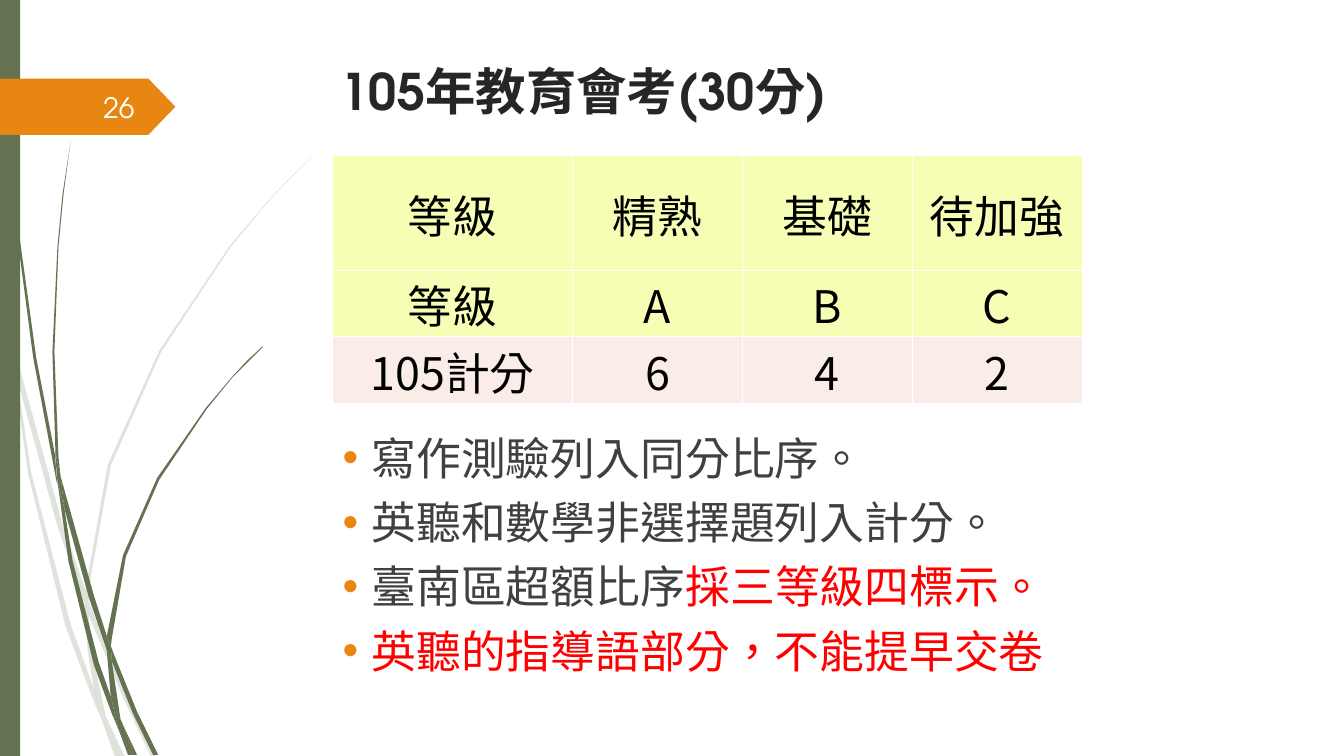
from lxml.etree import SubElement
from pptx import Presentation
from pptx.dml.color import RGBColor
from pptx.enum.shapes import MSO_SHAPE
from pptx.enum.text import MSO_ANCHOR, MSO_AUTO_SIZE, PP_ALIGN
from pptx.oxml.ns import qn
from pptx.util import Cm, Pt

GREEN = RGBColor(0x64, 0x72, 0x52)
ORANGE = RGBColor(0xE7, 0x87, 0x12)
WHITE = RGBColor(0xFF, 0xFF, 0xFF)
NUMBER = RGBColor(0xFE, 0xFF, 0xFF)
DARK = RGBColor(0x26, 0x26, 0x26)
GREY = RGBColor(0x40, 0x40, 0x40)
BLACK = RGBColor(0, 0, 0)
RED = RGBColor(0xFF, 0, 0)
LIME = RGBColor(0xF5, 0xFE, 0xB4)
BLUSH = RGBColor(0xFA, 0xED, 0xE7)
LATIN = "TeX Gyre Adventor"
CJK = "Noto Sans CJK JP"
GRASS_UNIT = 2.54

PALE_GRASS = [
    [(0.11, 3.5), (0.08, 3.22), (0, 2.82), (0, 2.99), (0.1, 3.44)],
    [(0.57, 5.22), (0.84, 5.99), (0.85, 5.86), (0.62, 5.2), (0.14, 3.45), (0.17, 3.76)],
    [(0.92, 6.07), (0.88, 5.96), (0.88, 6.1), (1.23, 6.94), (1.5, 7.51), (1.55, 7.51), (1.27, 6.92)],
    [(1.19, 7.51), (1.24, 7.51), (1.05, 7.11)],
    [(0.93, 6.83), (0.7, 6.19), (0.31, 4.69), (0.17, 3.76), (0.11, 3.5), (0.28, 4.7), (0.65, 6.21),
     (0.92, 6.93), (1.01, 7.14), (0.99, 7.07)],
    [(0.84, 5.99), (0.87, 6.46), (0.93, 6.83), (0.96, 6.92), (1.05, 7.11), (1.04, 7.06), (0.91, 6.46),
     (0.88, 6.1), (0.88, 6.08)],
    [(0.88, 5.84), (1.1, 4.62), (1.6, 3.49), (2.29, 2.45), (2.68, 1.98), (2.9, 1.75), (3.12, 1.53),
     (2.89, 1.75), (2.68, 1.97), (2.28, 2.44), (1.58, 3.48), (1.07, 4.61), (0.85, 5.84), (0.85, 5.86),
     (0.88, 5.96)],
    [(1.01, 7.14), (1.14, 7.51), (1.19, 7.51)],
    [(0.88, 6.08), (0.88, 6.1), (0.88, 5.96), (0.85, 5.86), (0.84, 5.99)],
    [(0.96, 6.92), (0.93, 6.83), (0.99, 7.07), (1.01, 7.14), (1.19, 7.51), (1.05, 7.11)],
]
DARK_GRASS = [
    [(0.07, 1.1), (0.17, 2.33), (0.33, 3.55), (0.56, 4.77), (0.57, 4.81), (0.55, 4.57), (0.55, 4.53),
     (0.36, 3.55), (0.19, 2.32), (0.08, 1.09), (0.05, 0.48), (0.03, 0), (0.03, 0.48)],
    [(0.88, 5.92), (1.06, 6.45), (1.06, 6.33), (1.06, 6.31), (0.93, 5.9), (0.6, 4.72), (0.64, 5.05)],
    [(1.13, 6.49), (1.1, 6.41), (1.11, 6.56), (1.32, 7.08), (1.52, 7.49), (1.57, 7.49), (1.36, 7.06)],
    [(1.1, 6.91), (0.98, 6.57), (0.72, 5.56), (0.64, 5.05), (0.57, 4.77), (0.68, 5.57), (0.93, 6.59),
     (1.11, 7.08), (1.17, 7.22), (1.16, 7.17)],
    [(0.6, 4.72), (0.58, 4.53), (0.54, 3.49), (0.58, 2.45), (0.63, 1.93), (0.7, 1.41), (0.62, 1.93),
     (0.57, 2.45), (0.52, 3.49), (0.55, 4.49)],
    [(1.33, 7.49), (1.36, 7.49), (1.22, 7.19)],
    [(0.57, 4.77), (0.64, 5.05), (0.6, 4.72), (0.55, 4.49), (0.55, 4.53)],
    [(1.11, 6.33), (1.25, 5.52), (1.58, 4.76), (2.05, 4.06), (2.31, 3.74), (2.46, 3.59), (2.61, 3.44),
     (2.6, 3.44), (2.45, 3.58), (2.31, 3.73), (2.04, 4.05), (1.56, 4.74), (1.22, 5.51), (1.06, 6.31),
     (1.1, 6.41)],
    [(1.17, 7.22), (1.27, 7.49), (1.31, 7.49)],
    [(1.06, 6.45), (1.1, 6.92), (1.16, 7.06), (1.22, 7.19), (1.2, 7.16), (1.11, 6.56), (1.09, 6.51)],
    [(1.06, 6.45), (1.09, 6.51), (1.11, 6.56), (1.1, 6.41), (1.06, 6.31), (1.06, 6.33)],
    [(1.16, 7.06), (1.1, 6.91), (1.16, 7.17), (1.17, 7.22), (1.31, 7.49), (1.33, 7.49), (1.22, 7.19)],
]


class Deck:
    """Hold the style and the current slide."""

    def __init__(self, prs):
        """Add a title and content slide."""
        self.s = prs.slides.add_slide(prs.slide_layouts[1])

    def run(self, p, text, size, font, color, bold=False):
        """Add one formatted run."""
        r = p.add_run()
        r.text = text
        r.font.size, r.font.name, r.font.bold = Pt(size), font, bold
        r.font.color.rgb = color
        rPr = r._r.get_or_add_rPr()
        rPr.set("lang", "zh-TW")
        SubElement(rPr, qn("a:ea"), typeface=font)

    def paint(self, sp, color, opacity=100):
        """Give a shape a plain fill."""
        sp.shadow.inherit = False
        sp.fill.solid()
        sp.fill.fore_color.rgb = color
        sp.line.fill.background()
        if opacity < 100:
            clr = next(sp._element.spPr.iter(qn("a:srgbClr")))
            SubElement(clr, qn("a:alpha"), val=str(opacity * 1000))

    def grass(self, pieces, opacity=100):
        """Draw grass blades from the outlines of their pieces."""
        for piece in pieces:
            outline = [(Cm(x * GRASS_UNIT), Cm(y * GRASS_UNIT)) for x, y in piece]
            fb = self.s.shapes.build_freeform(*outline[0])
            fb.add_line_segments(outline[1:], close=True)
            self.paint(fb.convert_to_shape(), GREEN, opacity)

    def shape(self, kind, box, color):
        """Add a filled preset shape."""
        sp = self.s.shapes.add_shape(kind, *map(Cm, box))
        self.paint(sp, color)
        return sp

    def frame(self, sp, box, anchor):
        """Place a text shape and return its text frame."""
        sp.left, sp.top, sp.width, sp.height = map(Cm, box)
        tf = sp.text_frame
        tf.word_wrap = True
        tf.auto_size = MSO_AUTO_SIZE.NONE
        tf.vertical_anchor = anchor
        return tf

    def title(self, text, box):
        """Fill the title placeholder."""
        p = self.frame(self.s.shapes.title, box, MSO_ANCHOR.TOP).paragraphs[0]
        p.alignment = PP_ALIGN.LEFT
        self.run(p, text, 36, LATIN, DARK, True)

    def bullets(self, items, box):
        """Fill the body placeholder with bulleted runs."""
        tf = self.frame(self.s.placeholders[1], box, MSO_ANCHOR.TOP)
        for i, item in enumerate(items):
            p = tf.add_paragraph() if i else tf.paragraphs[0]
            pPr = p._p.get_or_add_pPr()
            pPr.set("marL", str(Cm(0.73)))
            pPr.set("indent", str(-Cm(0.73)))
            clr = SubElement(pPr, qn("a:buClr"))
            SubElement(clr, qn("a:srgbClr"), val=str(ORANGE))
            SubElement(pPr, qn("a:buFont"), typeface="Arial")
            SubElement(pPr, qn("a:buChar"), char="•")
            p.space_before = Pt(7.5 if i else 0)
            for text, color in item:
                self.run(p, text, 32, CJK, color)

    def number(self, text, box):
        """Add the slide number."""
        sp = self.s.shapes.add_textbox(*map(Cm, box))
        p = self.frame(sp, box, MSO_ANCHOR.MIDDLE).paragraphs[0]
        p.alignment = PP_ALIGN.RIGHT
        self.run(p, text, 20, LATIN, NUMBER)

    def cell(self, cell, text, fill):
        """Format and fill one table cell."""
        tcPr = cell._tc.get_or_add_tcPr()
        for side in "LRTB":
            ln = SubElement(tcPr, qn(f"a:ln{side}"), w=str(Pt(1)))
            solid = SubElement(ln, qn("a:solidFill"))
            SubElement(solid, qn("a:srgbClr"), val=str(WHITE))
        cell.fill.solid()
        cell.fill.fore_color.rgb = fill
        cell.margin_left = cell.margin_right = cell.margin_top = Cm(0.03)
        cell.margin_bottom = 0
        cell.vertical_anchor = MSO_ANCHOR.MIDDLE
        p = cell.text_frame.paragraphs[0]
        p.alignment = PP_ALIGN.CENTER
        self.run(p, text, 32, CJK, BLACK)

    def table(self, rows, fills, widths, heights, left, top):
        """Add a table with one fill per row."""
        size = Cm(sum(widths)), Cm(sum(heights))
        tbl = self.s.shapes.add_table(len(rows), len(widths), Cm(left), Cm(top), *size).table
        for col, width in zip(tbl.columns, widths):
            col.width = Cm(width)
        for i, (texts, fill) in enumerate(zip(rows, fills)):
            tbl.rows[i].height = Cm(heights[i])
            for j, text in enumerate(texts):
                self.cell(tbl.cell(i, j), text, fill)


def main():
    """Build and save the slide."""
    prs = Presentation()
    prs.slide_width, prs.slide_height = Cm(33.87), Cm(19.05)
    deck = Deck(prs)
    deck.grass(PALE_GRASS, 20)
    deck.grass(DARK_GRASS)
    deck.shape(MSO_SHAPE.RECTANGLE, (0, 0, 0.51, 19.05), GREEN)
    tag = deck.shape(MSO_SHAPE.PENTAGON, (0, 1.98, 4.42, 1.42), ORANGE)
    tag.adjustments[0] = 0.48
    deck.title("105年教育會考(30分)", (8.33, 1.4, 19.46, 3.15))
    deck.bullets([
        [("寫作測驗列入同分比序。", GREY)],
        [("英聽和數學非選擇題列入計分。", GREY)],
        [("臺南區超額比序", GREY), ("採三等級四標示。", RED)],
        [("英聽的指導語部分，不能提早交卷", RED)],
    ], (8.38, 10.72, 19.51, 5.44))
    deck.table([
        ["等級", "精熟", "基礎", "待加強"],
        ["等級", "A", "B", "C"],
        ["105計分", "6", "4", "2"],
    ], [LIME, LIME, BLUSH], [6.05] + [4.28] * 3, [2.9, 1.45, 1.45], 8.38, 3.92)
    deck.number("26", (1.48, 2.2, 2.16, 1.02))
    prs.save("out.pptx")


if __name__ == "__main__":
    main()
